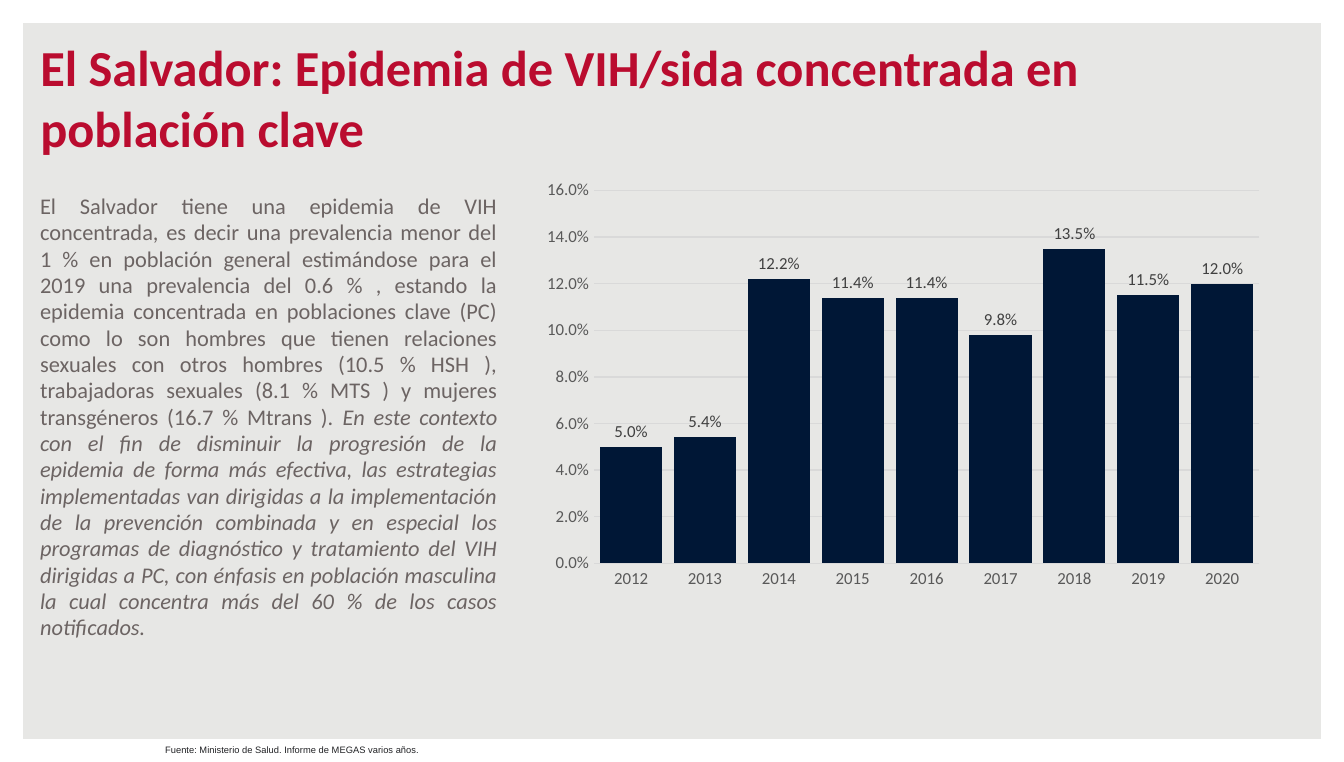
from pptx import Presentation
from pptx import util as u
from pptx.chart.data import CategoryChartData
from pptx.dml.color import RGBColor
from pptx.enum import chart as charts, shapes, text

COLORS = {
    "background": "E7E7E5", "frame": "FFFFFF", "title": "BA0C2F",
    "body": "6C6463", "source": "202124", "bar": "001736",
    "axis": "595959", "grid": "D9D9D9", "label": "404040",
}
TITLE = "El Salvador: Epidemia de VIH/sida concentrada en población clave"
CONTEXT = (
    "El Salvador tiene una epidemia de VIH concentrada, es decir una prevalencia "
    "menor del 1 % en población general estimándose para el 2019 una prevalencia "
    "del 0.6 % , estando la epidemia concentrada en poblaciones clave (PC) como lo "
    "son hombres que tienen relaciones sexuales con otros hombres (10.5 % HSH ), "
    "trabajadoras sexuales (8.1 % MTS ) y mujeres transgéneros (16.7 % Mtrans ). "
)
STRATEGY = (
    "En este contexto con el fin de disminuir la progresión de la epidemia de forma "
    "más efectiva, las estrategias implementadas van dirigidas a la implementación "
    "de la prevención combinada y en especial los programas de diagnóstico y "
    "tratamiento del VIH dirigidas a PC, con énfasis en población masculina la cual "
    "concentra más del 60 % de los casos notificados."
)
SOURCE = "Fuente: Ministerio de Salud. Informe de MEGAS varios años."
YEARS = [str(year) for year in range(2012, 2021)]
PREVALENCE = [0.05, 0.054, 0.122, 0.114, 0.114, 0.098, 0.135, 0.115, 0.12]


def points(*lengths):
    return [u.Pt(length) for length in lengths]


def color(name):
    return RGBColor.from_string(COLORS[name])


def format_font(font, size, name, face="Calibri", bold=False, italic=False):
    font.size, font.name = u.Pt(size), face
    font.bold, font.italic = bold, italic
    font.color.rgb = color(name)


def add_span(para, content, **style):
    span = para.add_run()
    span.text = content
    format_font(span.font, **style)


def add_text_box(page, *place):
    box = page.shapes.add_textbox(*points(*place))
    box.text_frame.word_wrap = True
    return box.text_frame.paragraphs[0]


def add_frame(page, width, height):
    frame = page.shapes.add_shape(shapes.MSO_SHAPE.FRAME, 0, 0, width, height)
    frame.adjustments[0] = 0.03
    frame.shadow.inherit = False
    frame.fill.solid()
    frame.fill.fore_color.rgb = color("frame")
    frame.line.fill.background()


def set_title(page):
    title = page.shapes.title
    title.left, title.top, title.width, title.height = points(14.4, 13.7, 681.8, 74.2)
    frame = title.text_frame
    frame.word_wrap = True
    frame.auto_size = text.MSO_AUTO_SIZE.NONE
    frame.vertical_anchor = text.MSO_ANCHOR.BOTTOM
    para = frame.paragraphs[0]
    para.alignment = text.PP_ALIGN.LEFT
    add_span(para, TITLE, size=27, name="title", bold=True)


def add_prevalence_chart(page, *place):
    data = CategoryChartData(number_format="0.0%")
    data.categories = YEARS
    data.add_series("Prevalencia", PREVALENCE)
    chart = page.shapes.add_chart(
        charts.XL_CHART_TYPE.COLUMN_CLUSTERED, *points(*place), data).chart
    chart.has_legend = chart.has_title = False
    chart.font.size, chart.font.name = u.Pt(10), "Calibri"

    # Axes and grid
    years, shares = chart.category_axis, chart.value_axis
    for axis in (years, shares):
        axis.major_tick_mark = axis.minor_tick_mark = charts.XL_TICK_MARK.NONE
        format_font(axis.tick_labels.font, size=9, name="axis")
    shares.minimum_scale, shares.maximum_scale, shares.major_unit = 0, 0.16, 0.02
    shares.tick_labels.number_format = "0.0%"
    shares.tick_labels.number_format_is_linked = False
    shares.format.line.fill.background()
    for line in (years.format.line, shares.major_gridlines.format.line):
        line.color.rgb = color("grid")
        line.width = u.Pt(0.75)

    # Bars and their labels
    plot = chart.plots[0]
    plot.gap_width, plot.overlap, plot.vary_by_categories = 19, -27, False
    bars = plot.series[0]
    bars.format.fill.solid()
    bars.format.fill.fore_color.rgb = color("bar")
    labels = bars.data_labels
    labels.show_value = True
    labels.position = charts.XL_LABEL_POSITION.OUTSIDE_END
    labels.number_format, labels.number_format_is_linked = "0.0%", False
    format_font(labels.font, size=9, name="label")


def main():
    deck = Presentation()
    deck.slide_width, deck.slide_height = points(720, 408.24)
    page = deck.slides.add_slide(deck.slide_layouts[5])
    page.background.fill.solid()
    page.background.fill.fore_color.rgb = color("background")

    add_frame(page, deck.slide_width, deck.slide_height)
    set_title(page)

    # Explanation on the left
    para = add_text_box(page, 14.4, 100, 259.2, 294.5)
    para.alignment = text.PP_ALIGN.JUSTIFY
    para.space_before, para.space_after = points(18, 8)
    para.line_spacing = 0.98
    add_span(para, CONTEXT, size=12, name="body")
    add_span(para, STRATEGY, size=12, name="body", italic=True)

    add_prevalence_chart(page, 285.1, 92.2, 397.4, 227.5)

    # Source line on the lower edge
    para = add_text_box(page, 81.4, 395.3, 614.9, 13.7)
    add_span(para, SOURCE, size=5, name="source", face="Arial")

    deck.save("out.pptx")


if __name__ == "__main__":
    main()
